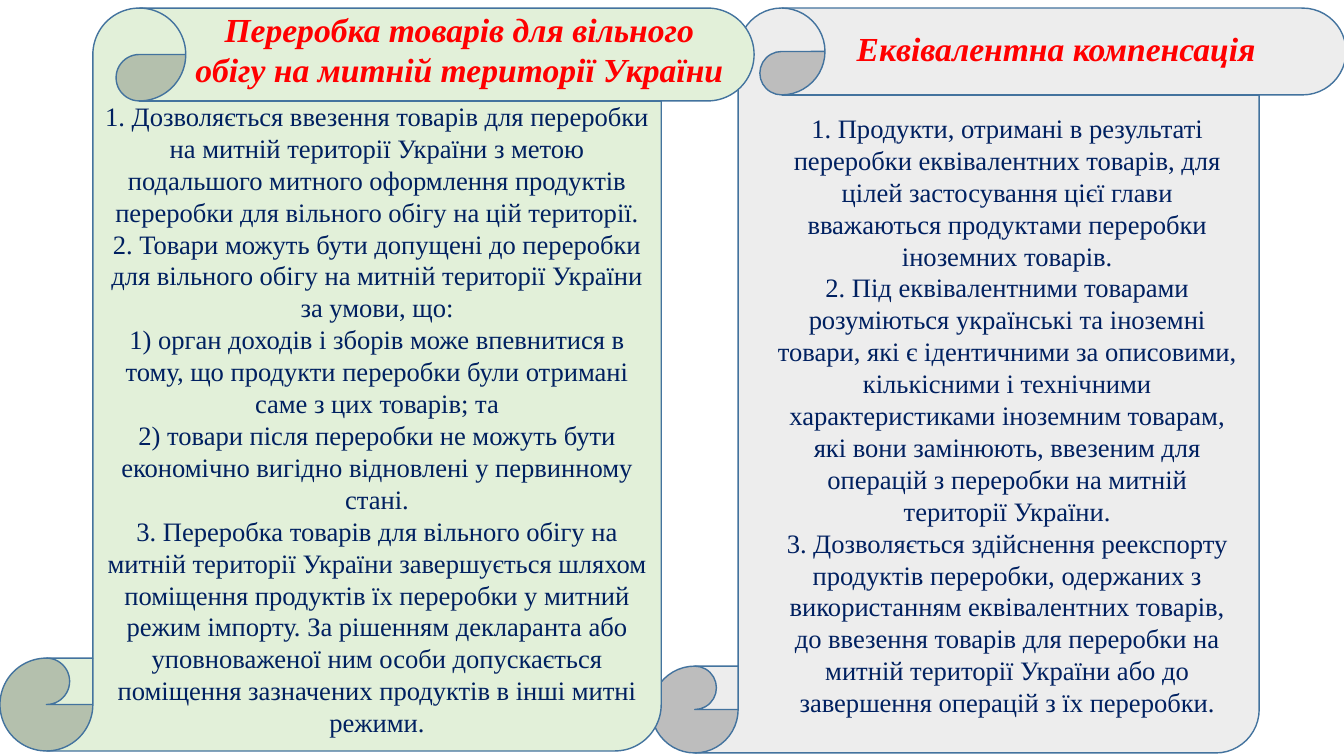
import pptx
import pptx.util
import pptx.dml.color
import pptx.enum.shapes
import pptx.enum.text

COLORS = {"left": "E2F0D9", "right": "EDEDED", "outline": "43739E",
          "title": "FF0000", "body": "002060"}

LEFT_TITLE = "Переробка товарів для вільного обігу на митній території України"
LEFT_BODY = [
    "1. Дозволяється ввезення товарів для переробки на митній території України з метою подальшого "
    "митного оформлення продуктів переробки для вільного обігу на цій території.",
    "2. Товари можуть бути допущені до переробки для вільного обігу на митній території України за умови, що:",
    "1) орган доходів і зборів може впевнитися в тому, що продукти переробки були отримані саме з цих товарів; та",
    "2) товари після переробки не можуть бути економічно вигідно відновлені у первинному стані.",
    "3. Переробка товарів для вільного обігу на митній території України завершується шляхом поміщення "
    "продуктів їх переробки у митний режим імпорту. За рішенням декларанта або уповноваженої ним особи "
    "допускається поміщення зазначених продуктів в інші митні режими.",
]
RIGHT_TITLE = "Еквівалентна компенсація"
RIGHT_BODY = [
    "1. Продукти, отримані в результаті переробки еквівалентних товарів, для цілей застосування цієї глави "
    "вважаються продуктами переробки іноземних товарів.",
    "2. Під еквівалентними товарами розуміються українські та іноземні товари, які є ідентичними за "
    "описовими, кількісними і технічними характеристиками іноземним товарам, які вони замінюють, "
    "ввезеним для операцій з переробки на митній території України.",
    "3. Дозволяється здійснення реекспорту продуктів переробки, одержаних з використанням еквівалентних "
    "товарів, до ввезення товарів для переробки на митній території України або до завершення операцій "
    "з їх переробки.",
]


class Deck:
    """Style and current slide; boxes are percentages of the slide size."""
    font = "Times New Roman"
    title_size, body_size = 24, 19

    def __init__(self, width, height):
        self.prs = pptx.Presentation()
        self.prs.slide_width = pptx.util.Inches(width)
        self.prs.slide_height = pptx.util.Inches(height)
        self.s = self.prs.slides.add_slide(self.prs.slide_layouts[6])
        self.shapes = self.s.shapes

    def group(self):
        self.shapes = self.s.shapes.add_group_shape().shapes

    def box(self, x, y, w, h):
        sides = (self.prs.slide_width, self.prs.slide_height) * 2
        return [round(side * share / 100) for side, share in zip(sides, (x, y, w, h))]

    def color(self, name):
        return pptx.dml.color.RGBColor.from_string(COLORS[name])

    def paragraphs(self, tf, texts, role, size, emphasis=None):
        tf.word_wrap = True
        for i, text in enumerate(texts):
            p = tf.paragraphs[0] if i == 0 else tf.add_paragraph()
            p.add_run().text = text
            p.alignment = pptx.enum.text.PP_ALIGN.CENTER
            p.font.name = self.font
            p.font.size = pptx.util.Pt(size)
            p.font.bold = p.font.italic = emphasis
            p.font.color.rgb = self.color(role)

    def scroll(self, fill, *box):
        sp = self.shapes.add_shape(pptx.enum.shapes.MSO_SHAPE.VERTICAL_SCROLL, *self.box(*box))
        sp.shadow.inherit = False
        sp.fill.solid()
        sp.fill.fore_color.rgb = self.color(fill)
        sp.line.color.rgb = self.color("outline")
        sp.line.width = pptx.util.Pt(1)
        return sp

    def scroll_body(self, sp, texts, top_inset):
        tf = sp.text_frame
        tf.vertical_anchor = pptx.enum.text.MSO_ANCHOR.MIDDLE
        tf.margin_top = pptx.util.Inches(top_inset)
        self.paragraphs(tf, texts, "body", self.body_size)

    def text(self, *box):
        tf = self.shapes.add_textbox(*self.box(*box)).text_frame
        tf.auto_size = pptx.enum.text.MSO_AUTO_SIZE.SHAPE_TO_FIT_TEXT
        return tf

    def title(self, text, *box):
        self.paragraphs(self.text(*box), [text], "title", self.title_size, True)

    def body(self, texts, *box):
        self.paragraphs(self.text(*box), texts, "body", self.body_size)


def main():
    deck = Deck(13.33, 7.5)

    # Right scroll: equivalent compensation
    deck.group()
    deck.scroll("right", 48.46, 1.07, 51.69, 98.53)
    deck.title(RIGHT_TITLE, 53.94, 3.07, 49.29, 10.8)
    deck.body(RIGHT_BODY, 57.01, 14.13, 35.86, 86.67)

    # Left scroll: processing for free circulation
    deck.group()
    scroll = deck.scroll("left", 0, 1.07, 56.11, 98.27)
    deck.scroll_body(scroll, LEFT_BODY, 0.37)
    deck.title(LEFT_TITLE, 13.5, 0.53, 41.34, 12.13)

    deck.prs.save("out.pptx")


if __name__ == "__main__":
    main()
